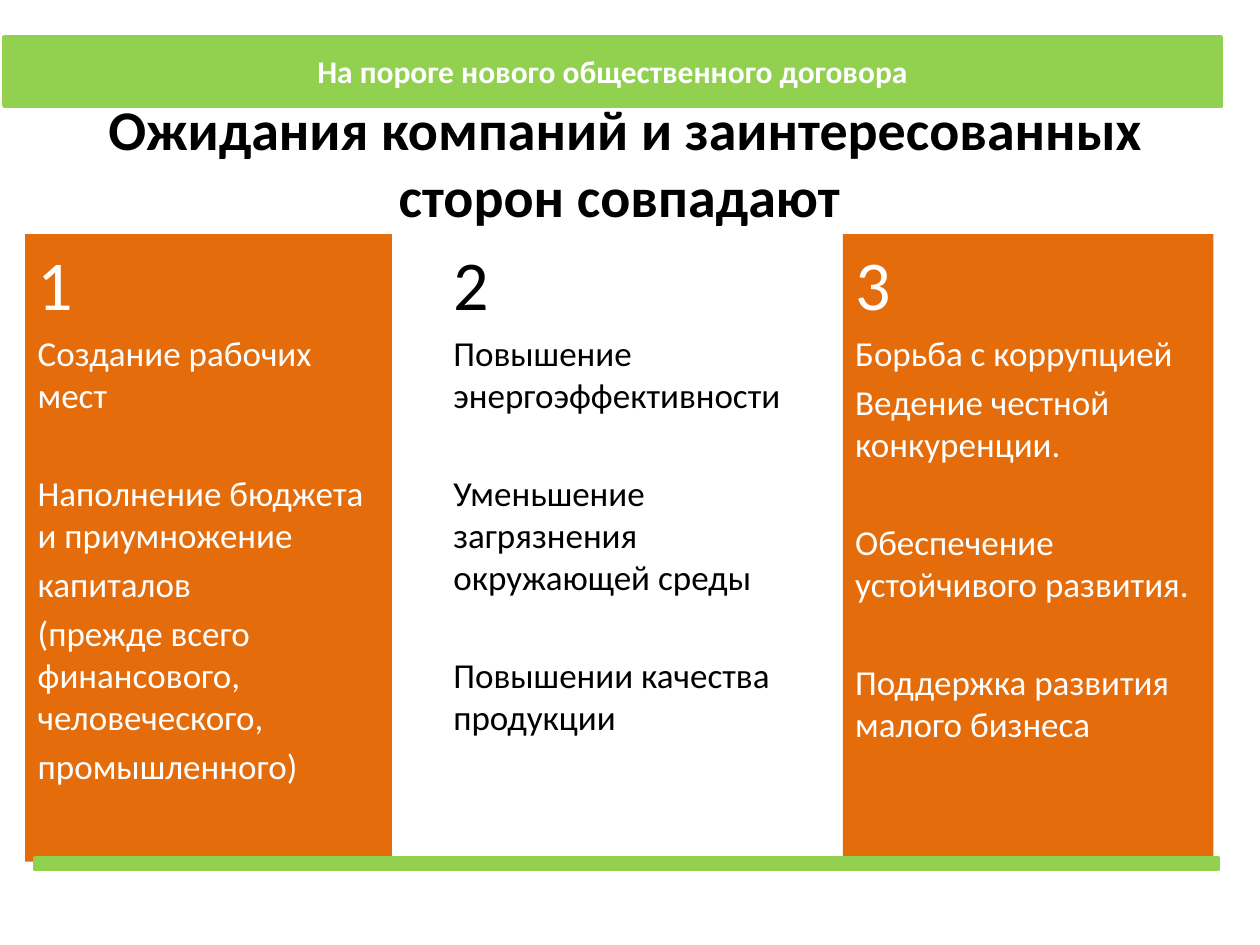
from dataclasses import dataclass
from typing import Optional

from pptx import Presentation
from pptx import util as u
from pptx.dml.color import RGBColor
from pptx.enum import shapes, text

COLOURS = {"green": "92D050", "orange": "E46C0A", "white": "FFFFFF", "black": "000000"}
FONT = "Calibri"
COLUMN_TOP = 4.72
LINE_GAP = u.Pt(4)
GROUP_GAP = u.Pt(32)


@dataclass
class Box:
    """Position and size in centimetres."""
    left: float
    top: float
    width: float
    height: float

    def lengths(self) -> list:
        return [u.Cm(v) for v in (self.left, self.top, self.width, self.height)]


@dataclass
class Column:
    number: str
    box: Box
    groups: list[list[str]]
    ink: str
    fill: Optional[str] = None


COLUMNS = [
    Column("2", Box(8.89, COLUMN_TOP, 7.8, 12.19), [
        ["Повышение энергоэффективности"],
        ["Уменьшение загрязнения окружающей среды"],
        ["Повышении качества продукции"],
    ], "black"),
    Column("3", Box(16.99, COLUMN_TOP, 7.47, 12.57), [
        ["Борьба с коррупцией", "Ведение честной конкуренции."],
        ["Обеспечение устойчивого развития."],
        ["Поддержка развития малого бизнеса"],
    ], "white", "orange"),
    Column("1", Box(0.51, COLUMN_TOP, 7.39, 12.65), [
        ["Создание рабочих мест"],
        ["Наполнение бюджета и приумножение", "капиталов",
         "(прежде всего финансового, человеческого,", "промышленного)"],
    ], "white", "orange"),
]


def rgb(name: str) -> RGBColor:
    return RGBColor.from_string(COLOURS[name])


def style(paragraph, size: int, ink: str, bold: bool = False,
          align=text.PP_ALIGN.LEFT) -> None:
    paragraph.alignment = align
    font = paragraph.font
    font.name, font.size, font.bold = FONT, u.Pt(size), bold
    font.color.rgb = rgb(ink)


def add_panel(slide, box: Box, fill: str, outlined: bool = False):
    panel = slide.shapes.add_shape(shapes.MSO_SHAPE.RECTANGLE, *box.lengths())
    panel.shadow.inherit = False
    panel.fill.solid()
    panel.fill.fore_color.rgb = rgb(fill)
    if outlined:
        panel.line.color.rgb = rgb(fill)
        panel.line.width = u.Pt(2)
    else:
        panel.line.fill.background()
    return panel


def add_column(slide, column: Column) -> None:
    if column.fill:
        holder = add_panel(slide, column.box, column.fill)
    else:
        holder = slide.shapes.add_textbox(*column.box.lengths())
    frame = holder.text_frame
    frame.word_wrap = True
    frame.vertical_anchor = text.MSO_ANCHOR.TOP
    number = frame.paragraphs[0]
    number.text = column.number
    style(number, 40, column.ink)
    for g, group in enumerate(column.groups):
        for i, line in enumerate(group):
            item = frame.add_paragraph()
            item.text = line
            style(item, 20, column.ink)
            item.space_before = GROUP_GAP if g and not i else LINE_GAP


def add_title(slide) -> None:
    title = slide.shapes.add_textbox(*Box(0.64, 1.42, 23.95, 2.21).lengths())
    frame = title.text_frame
    frame.word_wrap = True
    frame.vertical_anchor = text.MSO_ANCHOR.TOP
    frame.margin_top = u.Cm(0.48)
    heading = frame.paragraphs[0]
    heading.text = "Ожидания компаний и заинтересованных сторон совпадают "
    style(heading, 32, "black", True, text.PP_ALIGN.CENTER)


def add_banner(slide) -> None:
    banner = add_panel(slide, Box(0.08, 0.74, 24.54, 1.4), "green", outlined=True)
    frame = banner.text_frame
    frame.word_wrap = True
    frame.vertical_anchor = text.MSO_ANCHOR.MIDDLE
    topic = frame.paragraphs[0]
    topic.text = "На пороге нового общественного договора"
    style(topic, 18, "white", True, text.PP_ALIGN.CENTER)


def main() -> None:
    deck = Presentation()
    deck.slide_width, deck.slide_height = u.Cm(25.4), u.Cm(19.05)
    slide = deck.slides.add_slide(deck.slide_layouts[6])

    # Heading, partly under the banner
    add_title(slide)
    add_banner(slide)

    # Three numbered columns
    for column in COLUMNS:
        add_column(slide, column)

    # Bottom rule over the columns
    add_panel(slide, Box(0.71, 17.3, 23.85, 0.23), "green", outlined=True)

    deck.save("out.pptx")


if __name__ == "__main__":
    main()
